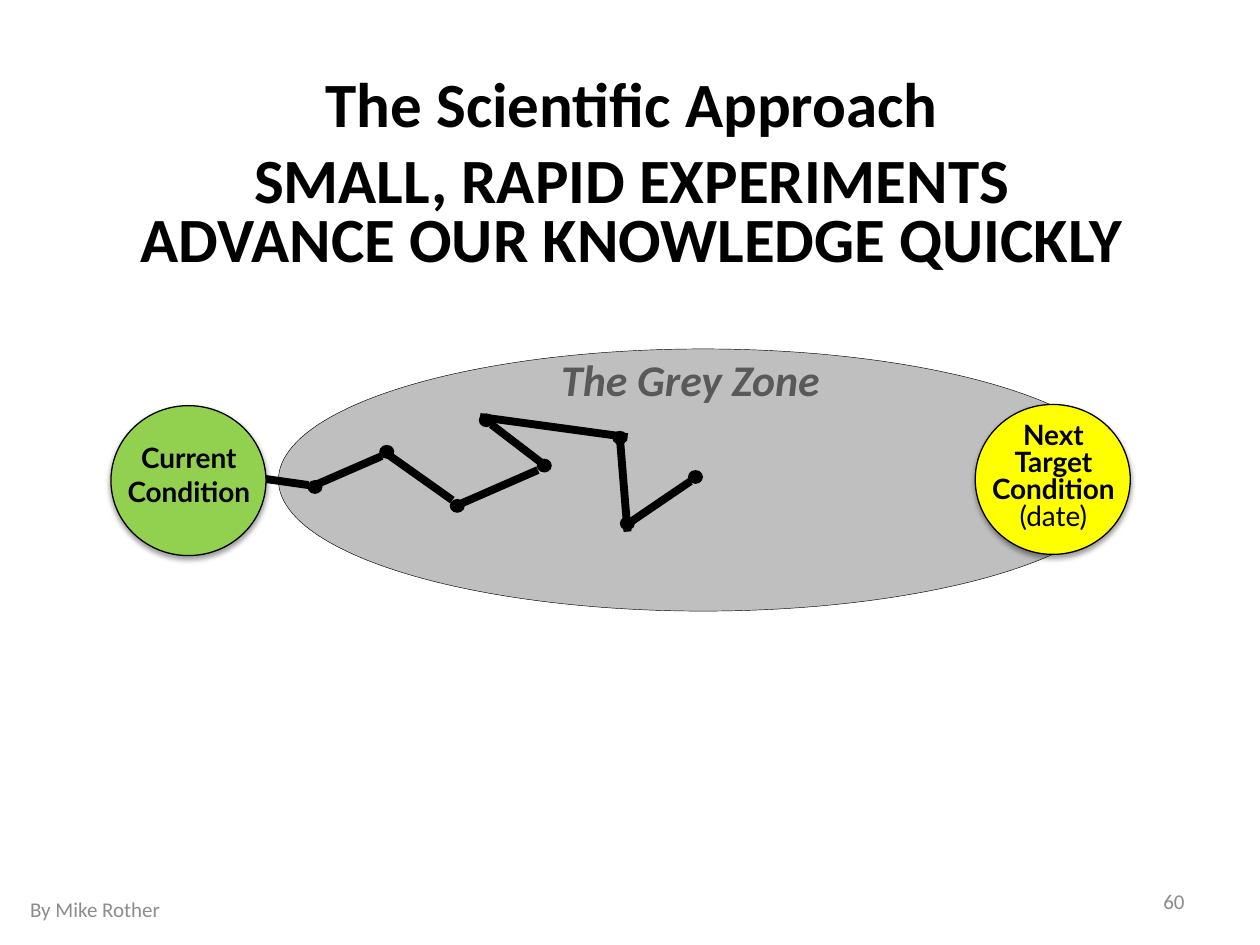
"""Build the slide on small, rapid experiments through the grey zone."""
from dataclasses import dataclass
from typing import NamedTuple

from lxml.etree import SubElement
from pptx import Presentation
from pptx.dml.color import RGBColor
from pptx.enum.shapes import MSO_CONNECTOR, MSO_SHAPE
from pptx.enum.text import MSO_ANCHOR, MSO_AUTO_SIZE, PP_ALIGN
from pptx.oxml.ns import qn
from pptx.util import Pt


@dataclass(frozen=True)
class Theme:
    black: str = "000000"
    zone: str = "BFBFBF"
    zone_text: str = "595959"
    current: str = "92D050"
    target: str = "FFFF00"
    footer: str = "8C8C8C"
    font: str = "Calibri"
    label_font: str = "Lato"
    title_size: float = 36
    zone_size: float = 25
    label_size: float = 16
    footer_size: float = 12
    path_width: float = 4.5


class Box(NamedTuple):
    x: float
    y: float
    w: float
    h: float


class Segment(NamedTuple):
    x1: float
    y1: float
    x2: float
    y2: float


@dataclass(frozen=True)
class Oval:
    box: Box
    fill: str
    line: float = 0
    shadow: bool = False
    kind: MSO_SHAPE = MSO_SHAPE.OVAL


@dataclass(frozen=True)
class Label:
    box: Box
    text: str
    size: float
    color: str
    font: str = "Calibri"
    bold: bool = False
    italic: bool = False
    align: PP_ALIGN = PP_ALIGN.CENTER
    anchor: MSO_ANCHOR = MSO_ANCHOR.TOP
    spacing: float = 1.0


T = Theme()
TITLE = "The Scientific Approach\nSMALL, RAPID EXPERIMENTS\nADVANCE OUR KNOWLEDGE QUICKLY"
TITLE_BOX = Box(16.56, 42.5, 689, 121)
ZONE = Oval(Box(159.1, 199.4, 485.3, 149.8), T.zone, 0.25)
TARGET = Oval(Box(557.3, 231.1, 88.6, 85.7), T.target, 0.75, True)
CURRENT = Oval(Box(63.4, 231.8, 88.6, 85.7), T.current, 0.75, True)
DOTS = [(175.7, 274.3), (216.7, 254.2), (257, 285.1), (306.7, 262.1),
        (273.6, 236.2), (349.9, 246.2), (354.2, 295.2), (393.1, 268.6)]
SEGMENTS = [
    Segment(135.4, 271.4, 176.4, 277.2), Segment(180, 277.2, 218.2, 260.6),
    Segment(221, 259.2, 258.5, 285.8), Segment(261.4, 288.7, 307.4, 268.6),
    Segment(280.8, 242.6, 311, 265.7), Segment(274.3, 238.3, 358.6, 249.8),
    Segment(354.2, 249.8, 358.6, 303.8), Segment(358.6, 299.5, 394.6, 275),
]
TARGET_LABEL = Label(Box(553, 239, 97.9, 69.8), "Next\nTarget Condition\n(date)",
                     T.label_size, T.black, T.label_font, bold=True, spacing=0.8)
LABELS = [
    Label(Box(59, 248.4, 97.9, 46.1), "Current Condition",
          T.label_size, T.black, T.label_font, bold=True),
    Label(Box(284.4, 198, 220.3, 37.4), "The Grey Zone",
          T.zone_size, T.zone_text, bold=True, italic=True),
    Label(Box(10.1, 505.4, 228.2, 28.8), "By Mike Rother", T.footer_size, T.footer,
          align=PP_ALIGN.LEFT, anchor=MSO_ANCHOR.MIDDLE),
    Label(Box(516.2, 500.4, 167.8, 28.8), "60", T.footer_size, T.footer,
          align=PP_ALIGN.RIGHT, anchor=MSO_ANCHOR.MIDDLE),
]


def rgb(color: str) -> RGBColor:
    """Turn a hex string into a colour."""
    return RGBColor.from_string(color)


def add_shadow(sp) -> None:
    """Put a soft shadow below a shape."""
    effects = sp._element.spPr.find(qn("a:effectLst"))
    outer = SubElement(effects, qn("a:outerShdw"), blurRad=str(Pt(3.1)),
                       dist=str(Pt(1.6)), dir="5400000", rotWithShape="0")
    color = SubElement(outer, qn("a:srgbClr"), val=T.black)
    SubElement(color, qn("a:alpha"), val="38000")


def add_oval(s, oval: Oval) -> None:
    """Draw a filled oval."""
    sp = s.shapes.add_shape(oval.kind, *map(Pt, oval.box))
    sp.shadow.inherit = False
    sp.fill.solid()
    sp.fill.fore_color.rgb = rgb(oval.fill)
    if oval.line:
        sp.line.color.rgb = rgb(T.black)
        sp.line.width = Pt(oval.line)
    else:
        sp.line.fill.background()
    if oval.shadow:
        add_shadow(sp)


def add_segment(s, seg: Segment) -> None:
    """Draw one step of the path."""
    sp = s.shapes.add_connector(MSO_CONNECTOR.STRAIGHT, *map(Pt, seg))
    sp.line.color.rgb = rgb(T.black)
    sp.line.width = Pt(T.path_width)
    SubElement(sp._element.spPr, qn("a:effectLst"))


def format_text(tf, label: Label) -> None:
    """Fill a text frame and format its runs."""
    tf.text = label.text
    tf.word_wrap = True
    tf.auto_size = MSO_AUTO_SIZE.NONE
    tf.vertical_anchor = label.anchor
    for p in tf.paragraphs:
        p.alignment = label.align
        p.line_spacing = label.spacing
        for r in p.runs:
            r.font.name = label.font
            r.font.size = Pt(label.size)
            r.font.bold = label.bold
            r.font.italic = label.italic
            r.font.color.rgb = rgb(label.color)


def add_label(s, label: Label):
    """Add a text box and return its text frame."""
    tf = s.shapes.add_textbox(*map(Pt, label.box)).text_frame
    format_text(tf, label)
    return tf


def set_title(s) -> None:
    """Place and format the title."""
    sp = s.shapes.title
    sp.left, sp.top, sp.width, sp.height = map(Pt, TITLE_BOX)
    tf = sp.text_frame
    format_text(tf, Label(TITLE_BOX, TITLE, T.title_size, T.black, T.font, bold=True))
    for p in tf.paragraphs:
        p.line_spacing = Pt(34.1)
    tf.paragraphs[1].space_before = Pt(9)


def main() -> None:
    """Build and save the slide."""
    prs = Presentation()
    prs.slide_width, prs.slide_height = Pt(720), Pt(540)
    s = prs.slides.add_slide(prs.slide_layouts[5])
    set_title(s)
    add_oval(s, ZONE)
    add_oval(s, TARGET)
    tf = add_label(s, TARGET_LABEL)
    tf.paragraphs[-1].runs[0].font.bold = False
    for x, y in DOTS:
        add_oval(s, Oval(Box(x, y, 8.6, 7.9), T.black, kind=MSO_SHAPE.FLOWCHART_CONNECTOR))
    for seg in SEGMENTS:
        add_segment(s, seg)
    add_oval(s, CURRENT)
    for label in LABELS:
        add_label(s, label)
    prs.save("out.pptx")


if __name__ == "__main__":
    main()
